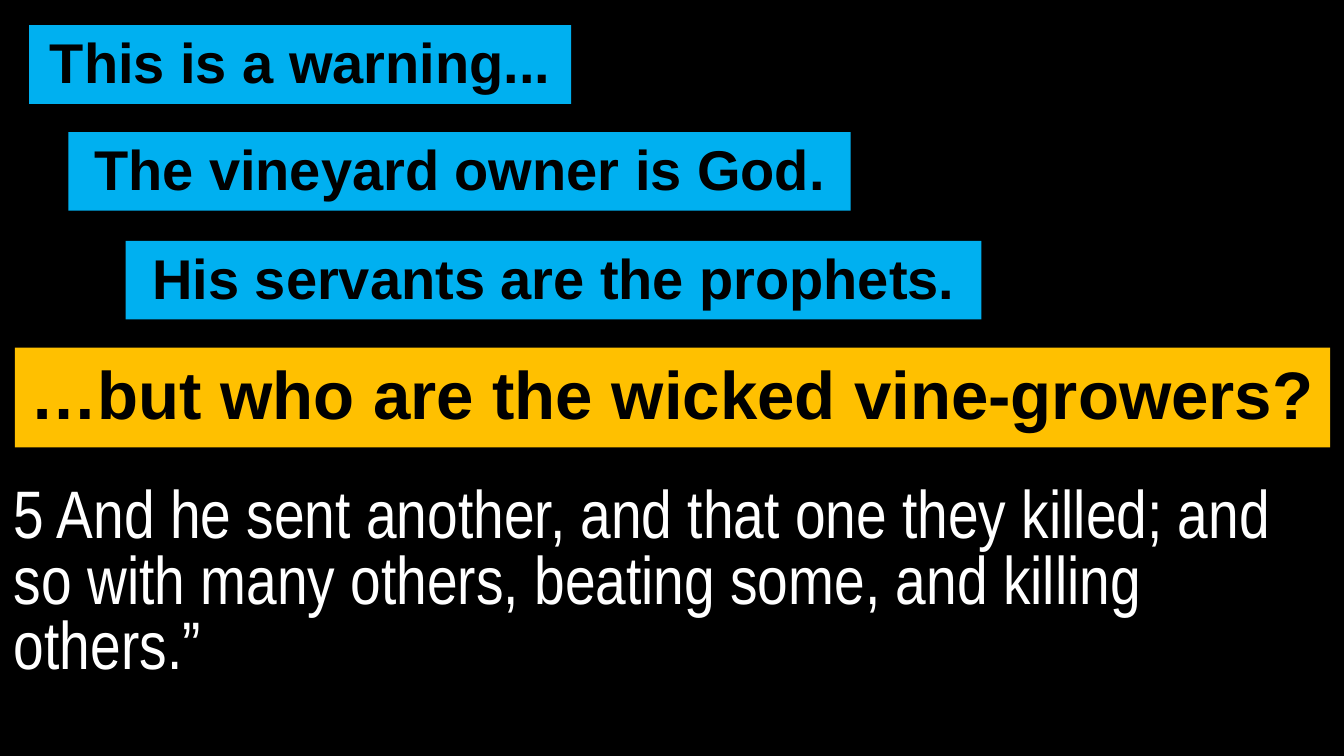
import pptx
import pptx.dml.color
import pptx.enum.shapes
import pptx.enum.text
import pptx.oxml.ns
import pptx.util
from lxml import etree

Pt = pptx.util.Pt
ALIGN = pptx.enum.text.PP_ALIGN

BLACK = "000000"
WHITE = "FFFFFF"
BLUE = "00B0F0"
AMBER = "FFC000"


def color(hex_code):
    return pptx.dml.color.RGBColor.from_string(hex_code)


class SlideBuilder:
    heading_font = "Arial"
    passage_font = "Arial Narrow"

    def __init__(self, presentation):
        self.slide = presentation.slides.add_slide(presentation.slide_layouts[6])
        background = self.slide.background.fill
        background.solid()
        background.fore_color.rgb = color(BLACK)

    def box(self, left, top, width, height, fill, insets):
        """Add a borderless rectangle; insets run left, top, right, bottom."""
        shape = self.slide.shapes.add_shape(
            pptx.enum.shapes.MSO_SHAPE.RECTANGLE,
            Pt(left), Pt(top), Pt(width), Pt(height))
        shape.shadow.inherit = False
        shape.fill.solid()
        shape.fill.fore_color.rgb = color(fill)
        shape.line.fill.background()
        frame = shape.text_frame
        frame.word_wrap = True
        frame.vertical_anchor = pptx.enum.text.MSO_ANCHOR.TOP
        (frame.margin_left, frame.margin_top,
         frame.margin_right, frame.margin_bottom) = map(Pt, insets)
        return shape

    def add_text(self, shape, text, size, font, ink, align, spacing, after, bold=False):
        paragraph = shape.text_frame.paragraphs[0]
        paragraph.alignment = align
        paragraph.line_spacing = Pt(spacing)
        paragraph.space_after = Pt(after)
        run = paragraph.add_run()
        run.text = text
        run.font.name = font
        run.font.size = Pt(size)
        run.font.bold = bold
        run.font.color.rgb = color(ink)
        return paragraph

    def banner(self, text, left, top, width, height=56.2, fill=BLUE, size=40, inset_top=10.8):
        shape = self.box(left, top, width, height, fill, (3.6, inset_top, 3.6, 3.6))
        self.add_text(shape, text, size, self.heading_font, BLACK,
                      ALIGN.CENTER, 39, 12, bold=True)

    def passage(self, text, left, top, width, height):
        shape = self.box(left, top, width, height, BLACK, (7.2, 7.2, 7.2, 3.6))
        # Let the background show through the panel
        solid_color = shape.element.spPr.find(".//" + pptx.oxml.ns.qn("a:srgbClr"))
        etree.SubElement(solid_color, pptx.oxml.ns.qn("a:alpha"), val="70000")
        paragraph = self.add_text(shape, text, 48, self.passage_font, WHITE,
                                  ALIGN.LEFT, 47, 18)
        properties = paragraph._p.get_or_add_pPr()
        properties.set("marL", str(Pt(2.9)))
        properties.set("indent", "0")


def main():
    presentation = pptx.Presentation()
    presentation.slide_width = Pt(960)
    presentation.slide_height = Pt(540)
    builder = SlideBuilder(presentation)

    # Scripture passage
    builder.passage(
        "5 And he sent another, and that one they killed; and so with many others, "
        "beating some, and killing others.”", 0, 340, 960, 200)

    # Stepped points
    points = [
        ("This is a warning...", 20.8, 18, 387.2),
        ("The vineyard owner is God.", 48.8, 94.3, 558.8),
        ("His servants are the prophets.", 89.8, 172, 611.2),
    ]
    for text, left, top, width in points:
        builder.banner(text, left, top, width)

    # Closing question
    builder.banner("…but who are the wicked vine-growers?", 10.7, 248.4, 939.4,
                   height=71.2, fill=AMBER, size=48, inset_top=21.6)

    presentation.save("out.pptx")


if __name__ == "__main__":
    main()
